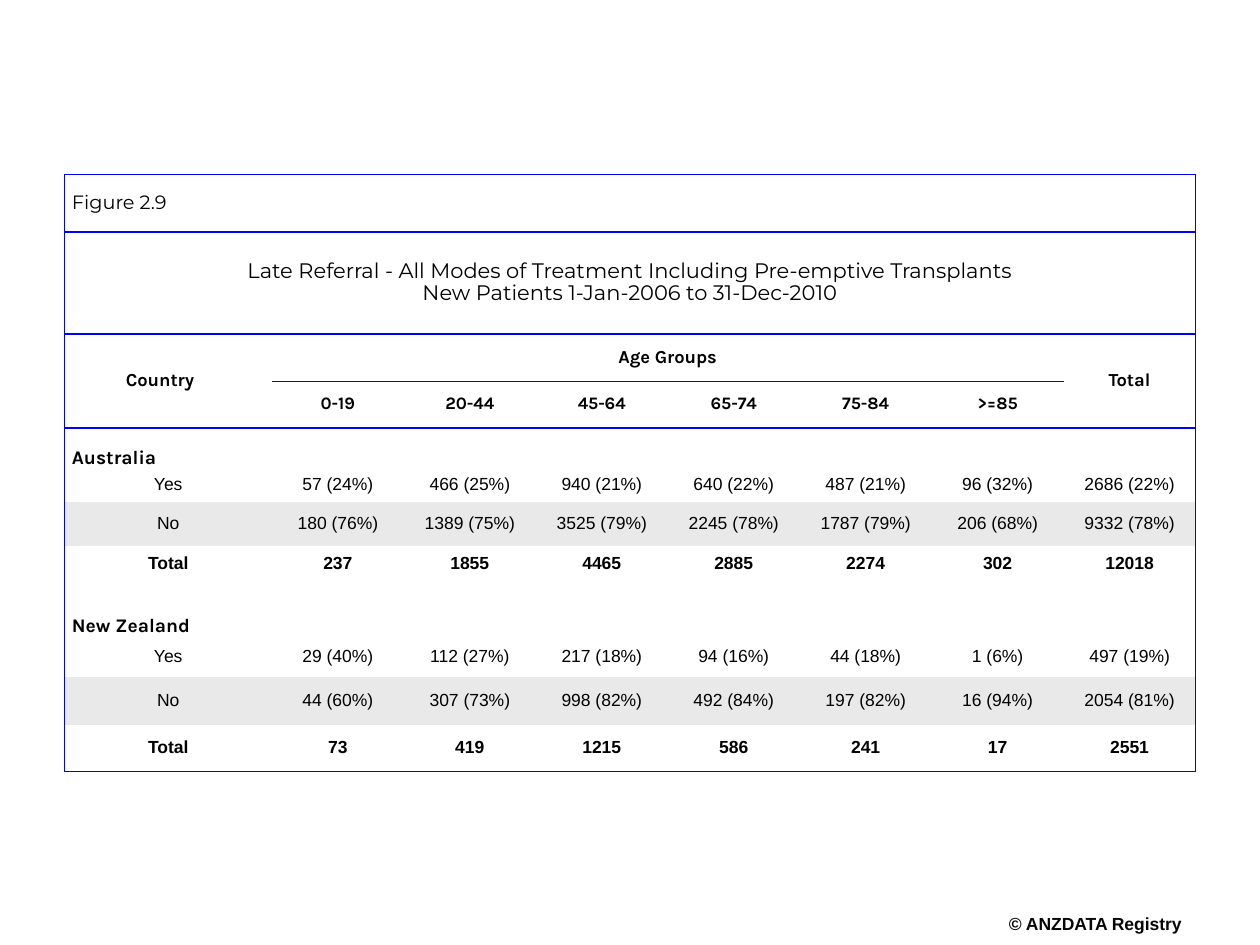
"""Build the late referral table slide by country and age group."""
import pptx
import pptx.dml.color
import pptx.enum.text
import pptx.util
import lxml.etree
import pptx.oxml.ns

Cm = pptx.util.Cm
ALIGN = pptx.enum.text.PP_ALIGN
ANCHOR = pptx.enum.text.MSO_ANCHOR

COLORS = {"text": "000000", "credit": "080808", "rule": "0000FF", "band": "E9E9E9", "plain": "FFFFFF"}
FIGURE = "Figure 2.9"
TITLE = "Late Referral - All Modes of Treatment Including Pre-emptive Transplants\nNew Patients 1-Jan-2006 to 31-Dec-2010"
CREDIT = "© ANZDATA Registry"
AGES = ["0-19", "20-44", "45-64", "65-74", "75-84", ">=85"]
BLANKS = [""] * 7
ROWS = [
    [FIGURE] + BLANKS,
    [TITLE] + BLANKS,
    ["Country", "Age Groups"] + [""] * 5 + ["Total"],
    [""] + AGES + [""],
    ["Australia"] + BLANKS,
    ["Yes", "57 (24%)", "466 (25%)", "940 (21%)", "640 (22%)", "487 (21%)", "96 (32%)", "2686 (22%)"],
    ["No", "180 (76%)", "1389 (75%)", "3525 (79%)", "2245 (78%)", "1787 (79%)", "206 (68%)", "9332 (78%)"],
    ["Total", "237", "1855", "4465", "2885", "2274", "302", "12018"],
    ["New Zealand"] + BLANKS,
    ["Yes", "29 (40%)", "112 (27%)", "217 (18%)", "94 (16%)", "44 (18%)", "1 (6%)", "497 (19%)"],
    ["No", "44 (60%)", "307 (73%)", "998 (82%)", "492 (84%)", "197 (82%)", "16 (94%)", "2054 (81%)"],
    ["Total", "73", "419", "1215", "586", "241", "17", "2551"],
]
ROW_HEIGHTS = [1.16, 2.05, 0.96, 0.94, 0.84, 0.65, 0.89, 0.75, 1.1, 0.79, 0.97, 0.93]
COLUMN_WIDTHS = [4.18] + [2.66] * 7
MERGES = [(0, 0, 0, 7), (1, 0, 1, 7), (2, 0, 3, 0), (2, 1, 2, 6), (2, 7, 3, 7)]
FULL_RULES = {0, 1, 2, 4, len(ROWS)}
AGE_RULE = 3
LAST_COLUMN = len(COLUMN_WIDTHS) - 1
NO_STYLE = "{2D5ABB26-0587-4C30-8999-92F81FD0307C}"


def rgb(name):
    return pptx.dml.color.RGBColor.from_string(COLORS[name])


def format_text(text_frame, font, size, bold, align, color="text"):
    for paragraph in text_frame.paragraphs:
        paragraph.alignment = align
        paragraph.line_spacing = 0.85
        for run in paragraph.runs:
            run.font.name = font
            run.font.size = pptx.util.Pt(size)
            run.font.bold = bold
            run.font.color.rgb = rgb(color)


def rule_width(boundary, column):
    if boundary in FULL_RULES:
        return 1
    return 0.75 if boundary == AGE_RULE and 0 < column < LAST_COLUMN else 0


def add_border(cell, side, width):
    properties = cell._tc.get_or_add_tcPr()
    line = lxml.etree.SubElement(properties, pptx.oxml.ns.qn(f"a:ln{side}"))
    line.set("w", str(pptx.util.Pt(width)))
    if width:
        fill = lxml.etree.SubElement(line, pptx.oxml.ns.qn("a:solidFill"))
        lxml.etree.SubElement(fill, pptx.oxml.ns.qn("a:srgbClr")).set("val", COLORS["rule"])
    else:
        lxml.etree.SubElement(line, pptx.oxml.ns.qn("a:noFill"))


def text_style(row, column):
    if row == 0:
        return "Montserrat", 11, False, ALIGN.LEFT
    if row == 1:
        return "Montserrat", 12, False, ALIGN.CENTER
    if row in (2, 3):
        return "Karla", 10.5 if row == 2 else 10, True, ALIGN.CENTER
    if not ROWS[row][1]:
        return "Karla", 11, True, ALIGN.LEFT
    return "Arial", 10, ROWS[row][0] == "Total", ALIGN.CENTER


def format_cell(cell, row, column):
    text = ROWS[row][column]
    if text:
        cell.text_frame.text = text
    style = text_style(row, column)
    format_text(cell.text_frame, *style)
    cell.margin_left = Cm(0.15 if style[-1] == ALIGN.LEFT else 0.05)
    cell.margin_right = Cm(0.38 if text == "Country" else 0.05)
    cell.margin_top = cell.margin_bottom = Cm(0.03)
    is_country = row > 3 and not ROWS[row][1]
    cell.vertical_anchor = ANCHOR.BOTTOM if is_country else ANCHOR.MIDDLE

    height, width = (cell.span_height, cell.span_width) if cell.is_merge_origin else (1, 1)
    add_border(cell, "L", 1 if column == 0 else 0)
    add_border(cell, "R", 1 if column + width - 1 == LAST_COLUMN else 0)
    add_border(cell, "T", rule_width(row, column))
    add_border(cell, "B", rule_width(row + height, column))
    cell.fill.solid()
    cell.fill.fore_color.rgb = rgb("band" if ROWS[row][0] == "No" else "plain")


def add_referral_table(slide):
    frame = slide.shapes.add_table(
        len(ROWS), len(COLUMN_WIDTHS), Cm(1.3), Cm(3.52), Cm(sum(COLUMN_WIDTHS)), Cm(sum(ROW_HEIGHTS)))
    table = frame.table
    table.first_row = table.horz_banding = False
    table._tbl.tblPr.find(pptx.oxml.ns.qn("a:tableStyleId")).text = NO_STYLE
    for column, width in zip(table.columns, COLUMN_WIDTHS):
        column.width = Cm(width)
    for row, height in zip(table.rows, ROW_HEIGHTS):
        row.height = Cm(height)
    for top, left, bottom, right in MERGES:
        table.cell(top, left).merge(table.cell(bottom, right))
    for row in range(len(ROWS)):
        for column in range(len(COLUMN_WIDTHS)):
            format_cell(table.cell(row, column), row, column)


def add_credit(slide):
    shape = slide.shapes.add_textbox(Cm(20.29), Cm(18.47), Cm(3.58), Cm(0.43))
    text_frame = shape.text_frame
    text_frame.margin_left = text_frame.margin_right = 0
    text_frame.margin_top = text_frame.margin_bottom = 0
    text_frame.word_wrap = False
    text_frame.text = CREDIT
    format_text(text_frame, "Arial", 10, True, ALIGN.CENTER, "credit")


def main():
    presentation = pptx.Presentation()
    presentation.slide_width, presentation.slide_height = Cm(25.4), Cm(19.05)
    slide = presentation.slides.add_slide(presentation.slide_layouts[6])
    add_credit(slide)
    add_referral_table(slide)
    presentation.save("out.pptx")


if __name__ == "__main__":
    main()
